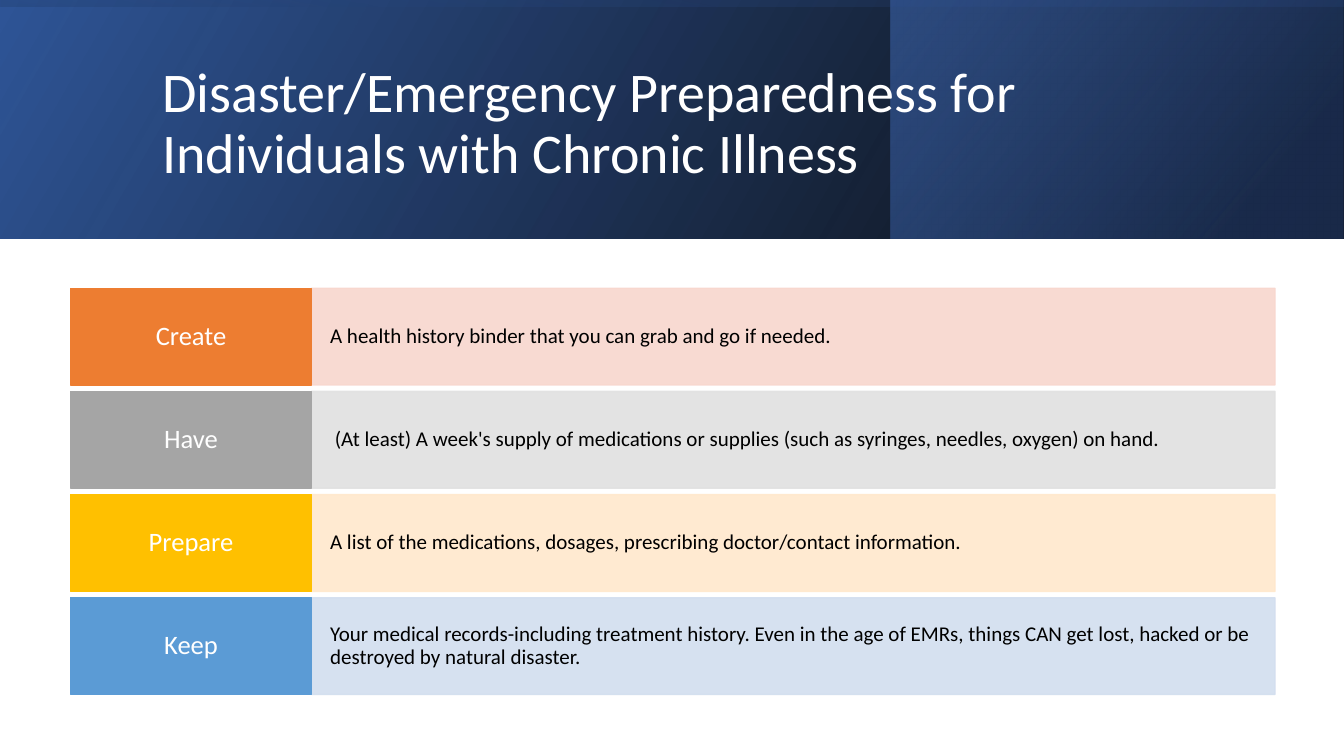
"""Build a slide on emergency preparedness for people with chronic illness."""
from pptx import Presentation
from pptx.dml.color import RGBColor as RGB
from pptx.enum.shapes import MSO_SHAPE as SHAPE
from pptx.enum.text import MSO_ANCHOR as ANCHOR, MSO_AUTO_SIZE as AUTO, PP_ALIGN as ALIGN
from pptx.oxml import parse_xml
from pptx.oxml.ns import nsdecls, qn
from pptx.util import Pt

COLORS = {
    "white": "FFFFFF", "black": "000000",
    "navy": "203864", "blue": "2F5597", "bright": "4472C4",
    "orange": "ED7D31", "orange_tint": "F8D7CE",
    "gray": "A5A5A5", "gray_tint": "E1E1E1",
    "gold": "FFC000", "gold_tint": "FFE8CC",
    "sky": "5B9BD5", "sky_tint": "D2DEEF",
}
TITLE = "Disaster/Emergency Preparedness for Individuals with Chronic Illness"
ROWS = [
    ("Create", "A health history binder that you can grab and go if needed.", "orange"),
    ("Have", " (At least) A week's supply of medications or supplies "
             "(such as syringes, needles, oxygen) on hand.", "gray"),
    ("Prepare", "A list of the medications, dosages, prescribing doctor/contact information.", "gold"),
    ("Keep", "Your medical records-including treatment history. Even in the age of EMRs, "
             "things CAN get lost, hacked or be destroyed by natural disaster.", "sky"),
]
SLIDE_W, SLIDE_H, BAND_H = 960, 540, 170.64
BANDS = [
    ((0, 0, SLIDE_W, BAND_H), 0, 330, [(0, "black", 96), (100, "blue", 100)]),
    ((636.5, 0, 322.8, BAND_H), 0, 320, [(19, "navy", 68), (100, "bright", 48)]),
    (((SLIDE_W - BAND_H) / 2, (BAND_H - SLIDE_W) / 2, BAND_H, SLIDE_W), 270, 350,
     [(23, "blue", 16), (99, "black", 45)]),
]
TITLE_BOX = (108.72, 27.36, 765.36, 123.84)
LABEL_X, LABEL_W, TEXT_W = 50.4, 172.08, 688.32
ROW_Y, ROW_H, ROW_STEP = 205.92, 69.12, 73.7


def add_rect(s, box):
    sp = s.shapes.add_shape(SHAPE.RECTANGLE, *map(Pt, box))
    sp.shadow.inherit = False
    return sp


def add_band(s, box, rotation, angle, stops):
    sp = add_rect(s, box)
    sp.line.fill.background()
    sp.rotation = rotation
    sp_pr = sp.element.spPr
    sp_pr.find(qn("a:xfrm")).set("flipH", "1")
    gs = "".join(
        f'<a:gs pos="{pos * 1000}"><a:srgbClr val="{COLORS[color]}">'
        f'<a:alpha val="{alpha * 1000}"/></a:srgbClr></a:gs>'
        for pos, color, alpha in stops)
    sp_pr.find(qn("a:prstGeom")).addnext(parse_xml(
        f'<a:gradFill {nsdecls("a")} rotWithShape="1"><a:gsLst>{gs}</a:gsLst>'
        f'<a:lin ang="{angle * 60000}" scaled="0"/></a:gradFill>'))


def set_text(sp, text, size, color, align, inset_x, inset_y):
    tf = sp.text_frame
    tf.word_wrap = True
    tf.auto_size = AUTO.NONE
    tf.vertical_anchor = ANCHOR.MIDDLE
    tf.margin_left = tf.margin_right = Pt(inset_x)
    tf.margin_top = tf.margin_bottom = Pt(inset_y)
    p = tf.paragraphs[0]
    p.alignment = align
    p.line_spacing = 0.9
    r = p.add_run()
    r.text = text
    r.font.name = "Calibri"
    r.font.size = Pt(size)
    r.font.color.rgb = RGB.from_string(COLORS[color])


def add_cell(s, box, color, alpha):
    sp = add_rect(s, box)
    rgb = RGB.from_string(COLORS[color])
    sp.fill.solid()
    sp.fill.fore_color.rgb = rgb
    sp.line.color.rgb = rgb
    sp.line.width = Pt(1)
    if alpha < 100:
        for clr in sp.element.spPr.iter(qn("a:srgbClr")):
            clr.append(parse_xml(f'<a:alpha {nsdecls("a")} val="{alpha * 1000}"/>'))
    return sp


def main():
    prs = Presentation()
    prs.slide_width, prs.slide_height = Pt(SLIDE_W), Pt(SLIDE_H)
    s = prs.slides.add_slide(prs.slide_layouts[5])

    for band in BANDS:
        add_band(s, *band)

    title = s.shapes.title
    title.left, title.top, title.width, title.height = map(Pt, TITLE_BOX)
    set_text(title, TITLE, 40, "white", ALIGN.LEFT, 7.2, 3.6)
    s.shapes.element.append(title.element)

    for i, (label, text, color) in enumerate(ROWS):
        y = ROW_Y + i * ROW_STEP
        sp = add_cell(s, (LABEL_X + LABEL_W, y, TEXT_W, ROW_H), color + "_tint", 90)
        set_text(sp, text, 15, "black", ALIGN.LEFT, 13.35, 17.2)
        sp = add_cell(s, (LABEL_X, y, LABEL_W, ROW_H), color, 100)
        set_text(sp, label, 19, "white", ALIGN.CENTER, 9.1, 7)

    prs.save("out.pptx")


if __name__ == "__main__":
    main()
